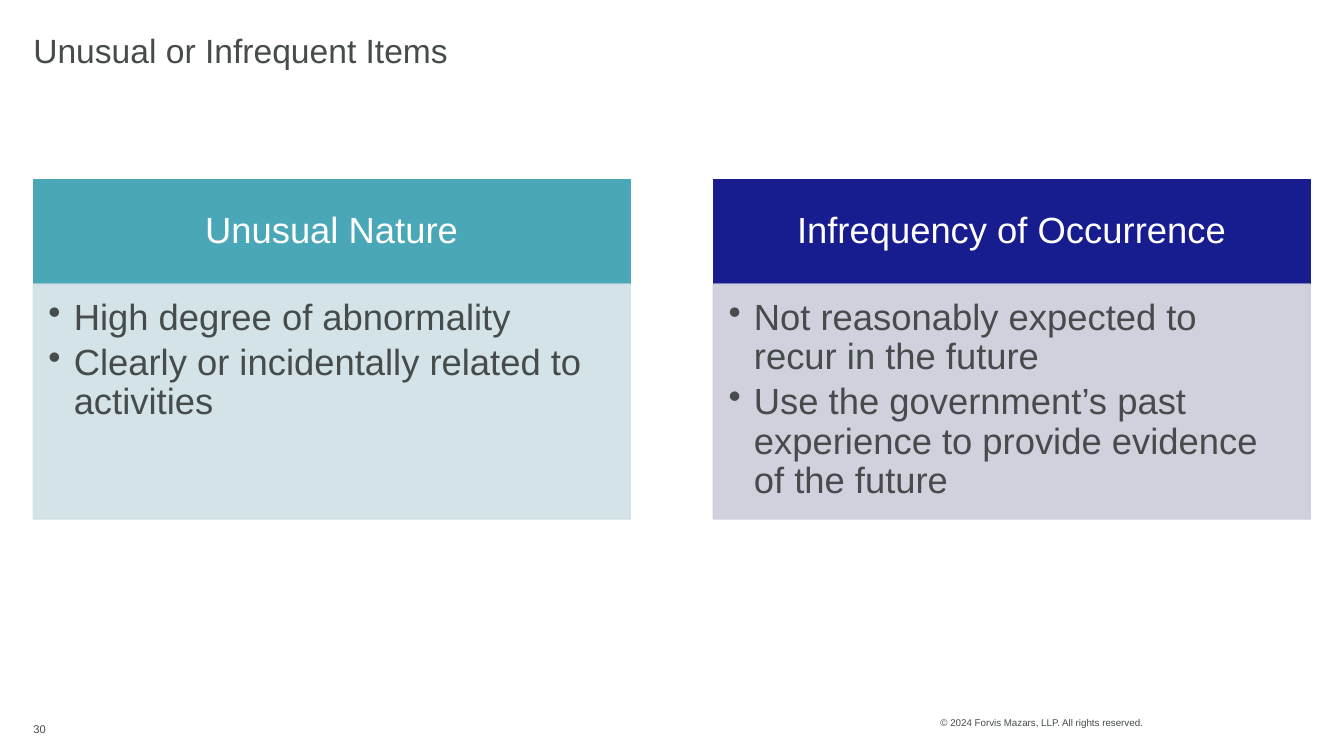
from dataclasses import dataclass

from lxml.etree import SubElement
from pptx import Presentation
from pptx.dml.color import RGBColor
from pptx.enum.shapes import MSO_SHAPE
from pptx.enum.text import MSO_ANCHOR, PP_ALIGN
from pptx.oxml.ns import qn
from pptx.util import Cm, Pt

COLORS = {
    "text": "464B4B",
    "white": "FFFFFF",
    "teal": "4AA7B7",
    "pale_teal": "D0E1E6",
    "navy": "171C8F",
    "pale_navy": "CCCDDB",
}
FONT = "Arial"
MARGIN = 0.84
COLUMN_WIDTH, COLUMN_STEP = 15.04, 17.14
HEADING_TOP, HEADING_HEIGHT, BODY_HEIGHT = 4.52, 2.64, 5.92
BULLET_INDENT = Cm(0.64)


@dataclass
class Label:
    text: str
    left: float
    top: float
    width: float
    height: float
    size: float
    inset: float = 0.13
    spacing: float = 1.0


@dataclass
class Criterion:
    heading: str
    points: list[str]
    heading_color: str
    body_color: str


LABELS = [
    Label("© 2024 Forvis Mazars, LLP. All rights reserved.", 23.7, 17.83, 5.59, 0.76, 7),
    Label("Unusual or Infrequent Items", MARGIN, 0.84, 15.7, 0.99, 24, 0, 0.9),
    Label("30", MARGIN, 17.98, 2.49, 0.76, 8),
]
CRITERIA = [
    Criterion(
        "Unusual Nature",
        ["High degree of abnormality", "Clearly or incidentally related to activities"],
        "teal", "pale_teal",
    ),
    Criterion(
        "Infrequency of Occurrence",
        ["Not reasonably expected to recur in the future",
         "Use the government’s past experience to provide evidence of the future"],
        "navy", "pale_navy",
    ),
]


def rgb(name: str) -> RGBColor:
    return RGBColor.from_string(COLORS[name])


def set_insets(frame, left: float, top: float, right: float, bottom: float) -> None:
    frame.word_wrap = True
    frame.margin_left, frame.margin_top = Cm(left), Cm(top)
    frame.margin_right, frame.margin_bottom = Cm(right), Cm(bottom)


def add_run(paragraph, text: str, size: float, color: str) -> None:
    run = paragraph.add_run()
    run.text = text
    run.font.name = FONT
    run.font.size = Pt(size)
    run.font.color.rgb = rgb(color)


def add_label(slide, label: Label) -> None:
    box = slide.shapes.add_textbox(
        Cm(label.left), Cm(label.top), Cm(label.width), Cm(label.height))
    frame = box.text_frame
    set_insets(frame, 0, label.inset, 0, label.inset)
    frame.vertical_anchor = MSO_ANCHOR.MIDDLE
    paragraph = frame.paragraphs[0]
    paragraph.line_spacing = label.spacing
    add_run(paragraph, label.text, label.size, "text")


def add_panel(slide, left: float, top: float, height: float, color: str):
    panel = slide.shapes.add_shape(
        MSO_SHAPE.RECTANGLE, Cm(left), Cm(top), Cm(COLUMN_WIDTH), Cm(height))
    panel.shadow.inherit = False
    panel.fill.solid()
    panel.fill.fore_color.rgb = rgb(color)
    panel.line.color.rgb = rgb(color)
    panel.line.width = Pt(1)
    return panel


def make_translucent(panel, percent: int) -> None:
    for color in panel.element.spPr.iter(qn("a:srgbClr")):
        SubElement(color, qn("a:alpha"), val=str(percent * 1000))


def add_bullet(paragraph) -> None:
    properties = paragraph._p.get_or_add_pPr()
    properties.set("marL", str(BULLET_INDENT))
    properties.set("indent", str(-BULLET_INDENT))
    SubElement(properties, qn("a:buChar"), char="•")


def add_criterion(slide, criterion: Criterion, left: float) -> None:
    # Heading band
    heading = add_panel(slide, left, HEADING_TOP, HEADING_HEIGHT, criterion.heading_color)
    frame = heading.text_frame
    set_insets(frame, 0.51, 0.3, 0.51, 0.3)
    frame.vertical_anchor = MSO_ANCHOR.MIDDLE
    title = frame.paragraphs[0]
    title.alignment = PP_ALIGN.CENTER
    title.line_spacing = 0.9
    add_run(title, criterion.heading, 26, "white")

    # Bulleted body
    body = add_panel(
        slide, left, HEADING_TOP + HEADING_HEIGHT, BODY_HEIGHT, criterion.body_color)
    make_translucent(body, 90)
    frame = body.text_frame
    set_insets(frame, 0.38, 0.38, 0.51, 0.58)
    frame.vertical_anchor = MSO_ANCHOR.TOP
    for index, point in enumerate(criterion.points):
        paragraph = frame.add_paragraph() if index else frame.paragraphs[0]
        add_bullet(paragraph)
        paragraph.alignment = PP_ALIGN.LEFT
        paragraph.line_spacing = 0.9
        paragraph.space_after = Pt(4)
        add_run(paragraph, point, 26, "text")


def main() -> None:
    presentation = Presentation()
    presentation.slide_width, presentation.slide_height = Cm(33.87), Cm(19.05)
    slide = presentation.slides.add_slide(presentation.slide_layouts[6])

    # Title, page number and copyright line
    for label in LABELS:
        add_label(slide, label)

    # Two criteria side by side
    for column, criterion in enumerate(CRITERIA):
        add_criterion(slide, criterion, MARGIN + column * COLUMN_STEP)

    presentation.save("out.pptx")


if __name__ == "__main__":
    main()
